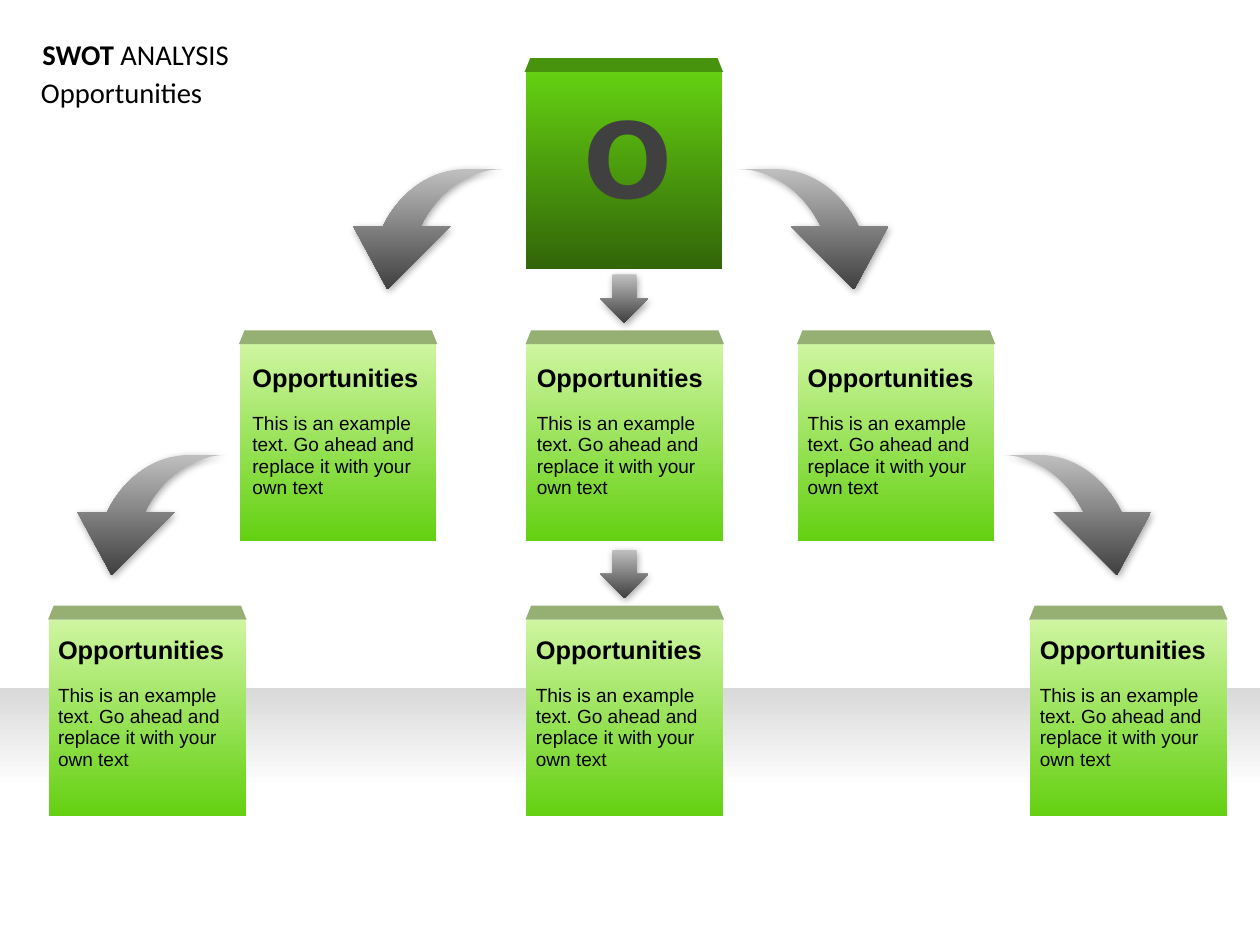
from lxml.etree import SubElement
from pptx import Presentation
from pptx.dml.color import RGBColor
from pptx.enum.shapes import MSO_SHAPE
from pptx.enum.text import PP_ALIGN
from pptx.oxml.ns import qn
from pptx.util import Cm, Pt

HEADING = "Opportunities"
BODY = "This is an example text. Go ahead and replace it with your own text"
TITLES = [
    (0.69, 0.76, [("SWOT ", True), ("ANALYSIS", False)]),
    (0.66, 1.6, [("Opportunities", False)]),
]

BOX_SIZE = 4.37
LID_HEIGHT = 0.31
MAIN_BOX = (11.68, 1.6)
# box top, text top, pairs of box left and text left
BOX_ROWS = [
    (7.65, 7.98, [(5.33, 5.36), (11.7, 11.68), (17.73, 17.7)]),
    (13.77, 14.02, [(1.09, 1.04), (11.7, 11.66), (22.89, 22.86)]),
]
DOWN_ARROWS = [(13.34, 6.1), (13.34, 12.22)]
# tail x, tail y, direction (1 right, -1 left)
CURVED_ARROWS = [(16.41, 3.76, 1), (11.18, 3.76, -1), (22.25, 10.11, 1), (5.05, 10.11, -1)]
INNER_CURVE = [(1.83, 1.27), (1.45, 0.48), (0.74, 0), (0, 0)]
OUTER_CURVE = [(0.84, 0), (1.57, 0), (2.29, 0.48), (2.67, 1.27)]
ARROW_TIP, HEAD_INNER, HEAD_OUTER = (2.57, 2.67), (1.17, 1.27), (3.33, 1.27)

MAIN_FILL = [(0, "64D011"), (1, "326609")]
BOX_FILL = [(0, "CEF5A0"), (1, "64D011")]
ARROW_FILL = [(0, "BFBFBF"), (1, "404040")]
BAND_FILL = [(0, "D9D9D9"), (0.39, "FFFFFF")]
MAIN_LID, BOX_LID = "48930D", "96B074"

TITLE_FONT = {"name": "Calibri", "size": Pt(18)}
LETTER_FONT = {"name": "DejaVu Sans", "size": Pt(66), "bold": True}
HEADING_FONT = {"name": "Arial", "size": Pt(16), "bold": True}
BODY_FONT = {"name": "Arial", "size": Pt(12), "bold": False}


def color(value):
    return RGBColor.from_string(value)


def fill_downwards(shape, stops):
    """Give a shape a top-to-bottom gradient without outline or shadow."""
    shape.fill.gradient()
    shape.fill.gradient_angle = 270
    for stop, (position, value) in zip(shape.fill.gradient_stops, stops):
        stop.position = position
        stop.color.rgb = color(value)
    shape.line.fill.background()
    shape.shadow.inherit = False


def style_arrow(shape):
    fill_downwards(shape, ARROW_FILL)
    effects = shape.element.spPr.find(qn("a:effectLst"))
    shadow = SubElement(effects, qn("a:outerShdw"), blurRad=str(Pt(5)), dist=str(Pt(2)),
                        dir=str(62 * 60000), algn="tl", rotWithShape="0")
    shade = SubElement(shadow, qn("a:srgbClr"), val="000000")
    SubElement(shade, qn("a:alpha"), val="37000")


def add_box(slide, left, top, stops, lid_color):
    """Add a square front face with a narrowing lid above it."""
    front = slide.shapes.add_shape(MSO_SHAPE.RECTANGLE, Cm(left), Cm(top), Cm(BOX_SIZE), Cm(BOX_SIZE))
    fill_downwards(front, stops)
    lid = slide.shapes.add_shape(MSO_SHAPE.TRAPEZOID, Cm(left - 0.02), Cm(top - LID_HEIGHT),
                                 Cm(BOX_SIZE + 0.04), Cm(LID_HEIGHT))
    lid.adjustments[0] = 0.4
    lid.fill.solid()
    lid.fill.fore_color.rgb = color(lid_color)
    lid.line.fill.background()
    lid.shadow.inherit = False


def add_text_frame(slide, left, top, width, height):
    frame = slide.shapes.add_textbox(Cm(left), Cm(top), Cm(width), Cm(height)).text_frame
    frame.word_wrap = True
    return frame


def add_run(paragraph, text, font_values, font_color="000000"):
    paragraph.line_spacing = 0.93
    run = paragraph.add_run()
    run.text = text
    for name, value in font_values.items():
        setattr(run.font, name, value)
    run.font.color.rgb = color(font_color)


def curve_points(controls, steps=16):
    """Return points along a cubic Bezier curve."""
    points = []
    for step in range(steps + 1):
        t = step / steps
        weights = ((1 - t) ** 3, 3 * t * (1 - t) ** 2, 3 * t ** 2 * (1 - t), t ** 3)
        points.append(tuple(sum(w * point[axis] for w, point in zip(weights, controls))
                            for axis in (0, 1)))
    return points


def add_curved_arrow(slide, tail_x, tail_y, direction):
    outline = [ARROW_TIP, HEAD_INNER, *curve_points(INNER_CURVE),
               *curve_points(OUTER_CURVE), HEAD_OUTER]
    points = [(Cm(tail_x + direction * x), Cm(tail_y + y)) for x, y in outline]
    builder = slide.shapes.build_freeform(*points[0])
    builder.add_line_segments(points[1:], close=True)
    style_arrow(builder.convert_to_shape())


def main():
    presentation = Presentation()
    presentation.slide_width, presentation.slide_height = Cm(28), Cm(21)
    slide = presentation.slides.add_slide(presentation.slide_layouts[6])

    band = slide.shapes.add_shape(MSO_SHAPE.RECTANGLE, 0, Cm(15.29), Cm(28), Cm(5.69))
    fill_downwards(band, BAND_FILL)

    add_box(slide, *MAIN_BOX, MAIN_FILL, MAIN_LID)
    letter = add_text_frame(slide, 11.95, 2.21, 4, 2.87).paragraphs[0]
    letter.alignment = PP_ALIGN.CENTER
    add_run(letter, "O", LETTER_FONT, "404040")

    for box_top, text_top, columns in BOX_ROWS:
        for box_left, text_left in columns:
            add_box(slide, box_left, box_top, BOX_FILL, BOX_LID)
            frame = add_text_frame(slide, text_left, text_top, 4.45, 3.99)
            add_run(frame.paragraphs[0], HEADING, HEADING_FONT)
            body = frame.add_paragraph()
            body.space_before = Pt(13)
            add_run(body, BODY, BODY_FONT)

    for arrow in CURVED_ARROWS:
        add_curved_arrow(slide, *arrow)
    for left, top in DOWN_ARROWS:
        style_arrow(slide.shapes.add_shape(MSO_SHAPE.DOWN_ARROW, Cm(left), Cm(top), Cm(1.07), Cm(1.07)))

    for left, top, parts in TITLES:
        paragraph = add_text_frame(slide, left, top, 5.2, 0.99).paragraphs[0]
        for text, bold in parts:
            add_run(paragraph, text, {**TITLE_FONT, "bold": bold})

    presentation.save("out.pptx")


if __name__ == "__main__":
    main()
